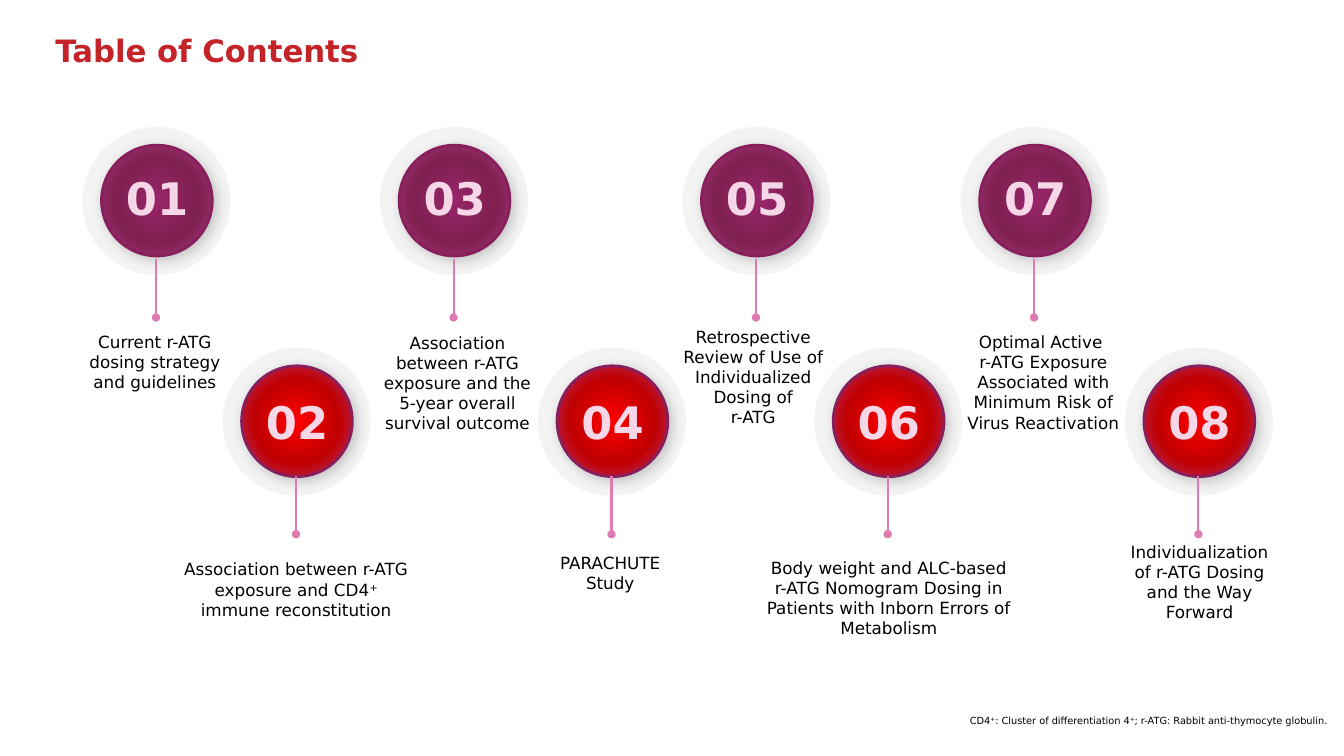
from lxml import etree
from pptx import Presentation
from pptx.dml.color import RGBColor
from pptx.enum.shapes import MSO_CONNECTOR as Connector, MSO_SHAPE as Shape
from pptx.enum.text import MSO_ANCHOR as Anchor, MSO_AUTO_SIZE as AutoSize, PP_ALIGN as Align
from pptx.oxml import parse_xml
from pptx.oxml.ns import nsdecls, qn
from pptx.util import Cm, Pt

COLORS = {
    "title": "C42328",
    "text": "000000",
    "number": "F5D7E7",
    "halo": "F3F3F3",
    "rim": "881F5D",
    "stem": "DE7BB0",
    "shadow": "000000",
}
UPPER = {"top": 3.2, "stem": 3.33, "number": 1.77,
         "gradient": {0: "99256B", 54: "7E2050", 100: "B33C86"}}
LOWER = {"top": 8.76, "stem": 3.23, "number": 1.86,
         "gradient": {0: "FF0000", 54: "C00000", 100: "B33C86"}}
HALO, DISC, STEM = 3.73, 2.79, 1.47

# Left edge of each badge; box, vertical inset, anchor and text of its label.
# Text between carets is superscript.
TOPICS = [
    (2.08, (1.9, 8.46, 4.01, 1.32), 0.25, Anchor.MIDDLE,
     "Current r-ATG dosing strategy and guidelines"),
    (5.61, (4.24, 13.84, 6.45, 1.8), 0.25, Anchor.TOP,
     "Association between r-ATG exposure and CD4^+^ immune reconstitution"),
    (9.58, (9.17, 8.13, 4.72, 3.1), 0.25, Anchor.TOP,
     "Association between r-ATG exposure and the 5-year overall survival outcome"),
    (13.56, (13.82, 13.67, 3.12, 1.85), 0.25, Anchor.TOP, "PARACHUTE Study"),
    (17.2, (16.56, 7.98, 4.85, 3.1), 0.25, Anchor.TOP,
     "Retrospective Review of Use of Individualized Dosing of\nr-ATG"),
    (20.52, (19.02, 13.92, 6.76, 2.31), 0.13, Anchor.TOP,
     "Body weight and ALC-based r-ATG Nomogram Dosing in Patients with "
     "Inborn Errors of Metabolism"),
    (24.21, (23.83, 8.23, 4.93, 2.82), 0.13, Anchor.TOP,
     "Optimal Active \nr-ATG Exposure Associated with Minimum Risk of Virus Reactivation"),
    (28.35, (28.07, 13.51, 4.32, 2.31), 0.13, Anchor.TOP,
     "Individualization of r-ATG Dosing and the Way Forward"),
]


def color(name):
    return RGBColor.from_string(COLORS[name])


def write(frame, text, color_name, size, align, bold=False):
    """Write one paragraph per line, raising the parts between carets."""
    font_format = {"name": "DejaVu Sans", "size": Pt(size), "bold": bold}
    for index, line in enumerate(text.split("\n")):
        paragraph = frame.add_paragraph() if index else frame.paragraphs[0]
        paragraph.alignment = align
        for position, part in enumerate(line.split("^")):
            run = paragraph.add_run()
            run.text = part
            for name, value in font_format.items():
                setattr(run.font, name, value)
            run.font.color.rgb = color(color_name)
            if position % 2:
                run.font._element.set("baseline", "30000")


def add_text(slide, box, text, color_name, size, align=Align.CENTER,
             anchor=Anchor.TOP, inset=0.13, bold=False):
    frame = slide.shapes.add_textbox(*map(Cm, box)).text_frame
    frame_format = {
        "word_wrap": True, "vertical_anchor": anchor,
        "margin_left": Cm(0.25), "margin_right": Cm(0.25),
        "margin_top": Cm(inset), "margin_bottom": Cm(inset),
    }
    for name, value in frame_format.items():
        setattr(frame, name, value)
    write(frame, text, color_name, size, align, bold)


def add_circle(slide, left, top, diameter):
    circle = slide.shapes.add_shape(
        Shape.OVAL, Cm(left), Cm(top), Cm(diameter), Cm(diameter))
    circle.shadow.inherit = False
    return circle


def fill_radially(shape, stops):
    stop_xml = "".join(
        f'<a:gs pos="{position * 1000}"><a:srgbClr val="{value}"/></a:gs>'
        for position, value in stops.items())
    gradient = parse_xml(
        f'<a:gradFill {nsdecls("a")} rotWithShape="1"><a:gsLst>{stop_xml}</a:gsLst>'
        '<a:path path="circle"><a:fillToRect l="50000" t="50000" r="50000" b="50000"/>'
        '</a:path></a:gradFill>')
    shape._element.spPr.find(qn("a:prstGeom")).addnext(gradient)


def add_shadow(shape):
    shape._element.spPr.find(qn("a:effectLst")).append(parse_xml(
        f'<a:outerShdw {nsdecls("a")} blurRad="{Pt(9)}" dist="{Pt(3)}" dir="2700000">'
        f'<a:srgbClr val="{COLORS["shadow"]}"><a:alpha val="20000"/></a:srgbClr>'
        '</a:outerShdw>'))


def add_stem(slide, x, top):
    stem = slide.shapes.add_connector(
        Connector.STRAIGHT, Cm(x), Cm(top), Cm(x), Cm(top + STEM))
    stem.line.color.rgb = color("stem")
    stem.line.width = Pt(1.5)
    etree.SubElement(stem.line._get_or_add_ln(), qn("a:tailEnd"), type="oval")
    etree.SubElement(stem._element.spPr, qn("a:effectLst"))


def add_badge(slide, number, left, row):
    top = row["top"]
    halo = add_circle(slide, left, top, HALO)
    halo.fill.solid()
    halo.fill.fore_color.rgb = color("halo")
    halo.line.fill.background()

    disc = add_circle(slide, left + 0.48, top + 0.46, DISC)
    disc.line.color.rgb = color("rim")
    disc.line.width = Pt(2)
    fill_radially(disc, row["gradient"])
    add_shadow(disc)

    add_stem(slide, left + 1.85, top + row["stem"])
    add_text(slide, (left + 0.66, top + row["number"] - 0.85, 2.44, 1.7),
             f"{number:02}", "number", 32, anchor=Anchor.MIDDLE, inset=0.25, bold=True)


def set_title(slide, text):
    title = slide.shapes.title
    box = {"left": 1.14, "top": 0.84, "width": 27.81, "height": 0.99}
    for name, value in box.items():
        setattr(title, name, Cm(value))
    frame = title.text_frame
    frame.auto_size = AutoSize.NONE
    frame.vertical_anchor = Anchor.MIDDLE
    write(frame, text, "title", 22, Align.LEFT, bold=True)
    frame.paragraphs[0].line_spacing = 0.9


def main():
    presentation = Presentation()
    presentation.slide_width = Cm(33.87)
    presentation.slide_height = Cm(19.05)
    slide = presentation.slides.add_slide(presentation.slide_layouts[5])
    set_title(slide, "Table of Contents")
    for number, (left, *_) in enumerate(TOPICS, 1):
        add_badge(slide, number, left, UPPER if number % 2 else LOWER)
    for _, box, inset, anchor, text in TOPICS:
        add_text(slide, box, text, "text", 12, anchor=anchor, inset=inset)
    add_text(slide, (16.94, 17.88, 16.76, 0.56),
             "CD4^+^: Cluster of differentiation 4^+^; r-ATG: Rabbit anti-thymocyte globulin.",
             "text", 7, align=Align.RIGHT)
    presentation.save("out.pptx")


if __name__ == "__main__":
    main()
